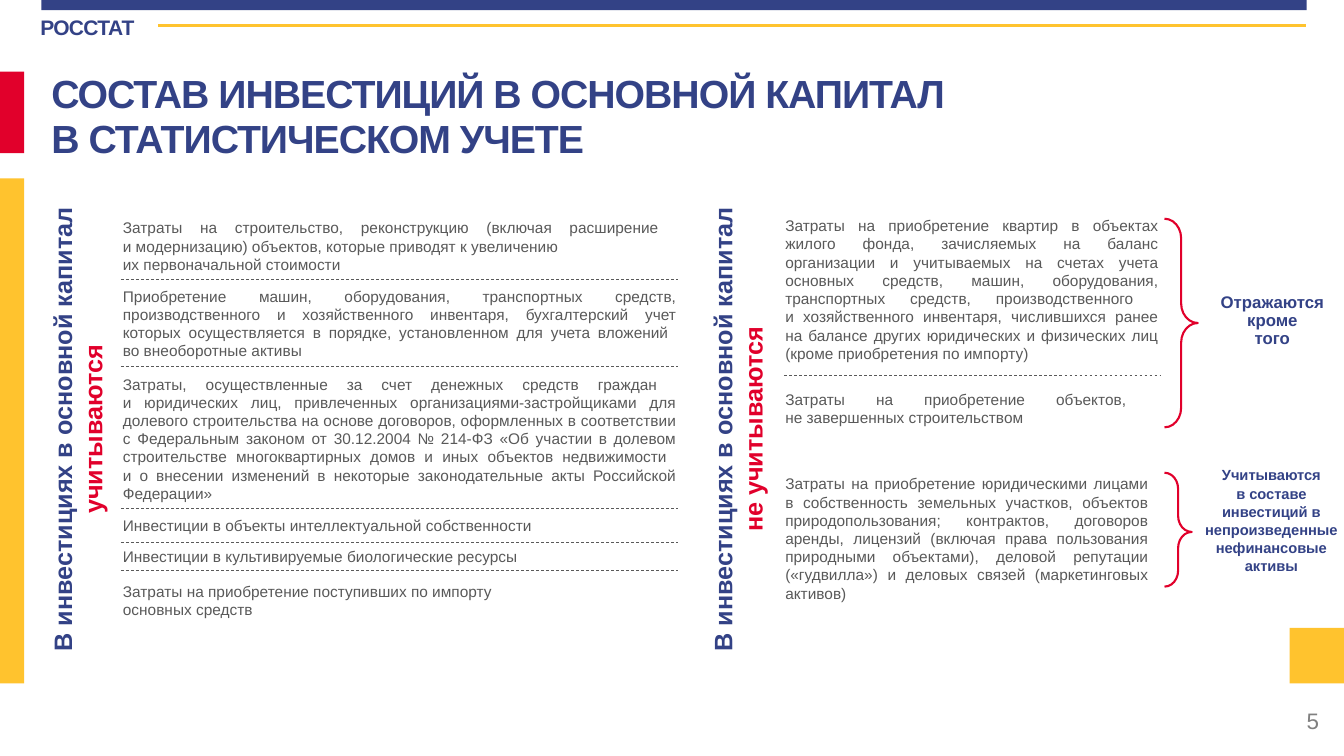
from dataclasses import dataclass

import pptx
import pptx.dml.color
import pptx.enum.dml
import pptx.enum.shapes
import pptx.enum.text
import pptx.oxml
import pptx.util

Inches = pptx.util.Inches
Pt = pptx.util.Pt
ALIGN = pptx.enum.text.PP_ALIGN
ANCHOR = pptx.enum.text.MSO_ANCHOR
SHAPE = pptx.enum.shapes.MSO_SHAPE


@dataclass(frozen=True)
class Theme:
    font: str = "Arial"
    blue: str = "334286"
    red: str = "E1002B"
    yellow: str = "FFC32E"
    text: str = "595959"
    number: str = "808080"
    title_size: float = 28
    heading_size: float = 18
    number_size: float = 16
    agency_size: float = 15
    note_size: float = 12
    small_note_size: float = 10.5
    body_size: float = 11
    body_leading: float = 13


T = Theme()

INCLUDED = [
    (0, 0.65, ["Затраты на строительство, реконструкцию (включая расширение \n"
               "и модернизацию) объектов, которые приводят к увеличению",
               "их первоначальной стоимости"]),
    (0.68, 0.83, ["Приобретение машин, оборудования, транспортных средств, производственного "
                  "и хозяйственного инвентаря, бухгалтерский учет которых осуществляется "
                  "в порядке, установленном для учета вложений \nво внеоборотные активы"]),
    (1.55, 1.38, ["Затраты, осуществленные за счет денежных средств граждан \n"
                  "и юридических лиц, привлеченных организациями-застройщиками для долевого "
                  "строительства на основе договоров, оформленных в соответствии с Федеральным "
                  "законом от 30.12.2004 № 214-ФЗ «Об участии в долевом строительстве "
                  "многоквартирных домов и иных объектов недвижимости \n"
                  "и о внесении изменений в некоторые законодательные акты "
                  "Российской Федерации»"]),
    (2.95, 0.28, ["Инвестиции в объекты интеллектуальной собственности"]),
    (3.26, 0.28, ["Инвестиции в культивируемые биологические ресурсы"]),
    (3.61, 0.47, ["Затраты на приобретение поступивших по импорту", "основных средств"]),
]
INCLUDED_RULES = [0.65, 1.51, 2.92, 3.26, 3.54]

EXCLUDED = [
    (0, 3.9, 1.56, ["Затраты на приобретение квартир в объектах жилого фонда, зачисляемых на "
                    "баланс организации и учитываемых на счетах учета основных средств, машин, "
                    "оборудования, транспортных средств, производственного \n"
                    "и хозяйственного инвентаря, числившихся ранее на балансе других "
                    "юридических и физических лиц (кроме приобретения по импорту)"]),
    (1.72, 3.89, 0.47, ["Затраты на приобретение объектов, \nне завершенных строительством"]),
    (2.56, 3.8, 1.38, ["Затраты на приобретение юридическими лицами в собственность земельных "
                       "участков, объектов природопользования; контрактов, договоров аренды, "
                       "лицензий (включая права пользования природными объектами), деловой "
                       "репутации («гудвилла») и деловых связей (маркетинговых активов)"]),
]


def rgb(color):
    return pptx.dml.color.RGBColor.from_string(color)


def add_text(p, text, size=T.body_size, color=T.text, bold=False, spacing=None):
    for i, part in enumerate(text.split("\n")):
        if i:
            p.add_line_break()
        if not part:
            continue
        r = p.add_run()
        r.text = part
        r.font.name = T.font
        r.font.size = Pt(size)
        r.font.bold = bold
        r.font.color.rgb = rgb(color)
        if spacing is not None:
            r.font._element.set("spc", str(round(spacing * 100)))


def text_box(slide, box, paragraphs, align=ALIGN.LEFT, leading=None,
             anchor=ANCHOR.TOP, inset=True, **style):
    sp = slide.shapes.add_textbox(*map(Inches, box))
    tf = sp.text_frame
    tf.word_wrap = True
    tf.vertical_anchor = anchor
    if not inset:
        tf.margin_left = tf.margin_top = tf.margin_right = tf.margin_bottom = 0
    for i, text in enumerate(paragraphs):
        p = tf.add_paragraph() if i else tf.paragraphs[0]
        p.alignment = align
        if leading:
            p.line_spacing = Pt(leading)
        add_text(p, text, **style)
    return sp


def cost_item(slide, box, paragraphs):
    text_box(slide, box, paragraphs, align=ALIGN.JUSTIFY, leading=T.body_leading)


def bar(slide, box, color):
    sp = slide.shapes.add_shape(SHAPE.RECTANGLE, *map(Inches, box))
    sp.shadow.inherit = False
    sp.fill.solid()
    sp.fill.fore_color.rgb = rgb(color)
    sp.line.fill.background()


def rule(slide, left, right, y, color=T.text, width=0.5, dashed=True):
    line = slide.shapes.add_connector(pptx.enum.shapes.MSO_CONNECTOR.STRAIGHT,
                                      Inches(left), Inches(y), Inches(right), Inches(y))
    line.line.color.rgb = rgb(color)
    line.line.width = Pt(width)
    if dashed:
        line.line.dash_style = pptx.enum.dml.MSO_LINE.DASH
    line._element.spPr.append(pptx.oxml.parse_xml(
        '<a:effectLst xmlns:a="http://schemas.openxmlformats.org/drawingml/2006/main"/>'))


def brace(slide, box, point):
    sp = slide.shapes.add_shape(SHAPE.RIGHT_BRACE, *map(Inches, box))
    sp.shadow.inherit = False
    sp.fill.background()
    sp.line.color.rgb = rgb(T.red)
    sp.line.width = Pt(1.5)
    sp.adjustments[0] = 0.59
    sp.adjustments[1] = point


def note(slide, box, text, size):
    text_box(slide, box, [text], align=ALIGN.CENTER, leading=T.body_leading,
             size=size, color=T.blue, bold=True)


def side_heading(slide, center_x, center_y, verdict):
    width, height = 5.75, 0.71
    sp = text_box(slide, (center_x - width / 2, center_y - height / 2, width, height),
                  ["В инвестициях в основной капитал\n"], align=ALIGN.CENTER,
                  size=T.heading_size, color=T.blue, bold=True)
    add_text(sp.text_frame.paragraphs[0], verdict, size=T.heading_size, color=T.red, bold=True)
    sp.rotation = 270


def frame(slide, width, height):
    bar(slide, (0.41, 0, 12.55, 0.1), T.blue)
    bar(slide, (0, 0.71, 0.24, 0.81), T.red)
    bar(slide, (0, 1.77, 0.24, 5.01), T.yellow)
    bar(slide, (width - 0.54, 6.23, 0.54, 0.55), T.yellow)
    rule(slide, 1.57, 12.95, 0.25, color=T.yellow, width=2, dashed=False)
    text_box(slide, (0.4, 0.14, 1.15, 0.31), ["РОССТАТ"], inset=False,
             size=T.agency_size, color=T.blue, bold=True, spacing=-0.5)
    text_box(slide, (width - 3.15, height - 0.55, 3, 0.4), ["5"], align=ALIGN.RIGHT,
             anchor=ANCHOR.MIDDLE, size=T.number_size, color=T.number)


def title(slide, box):
    sp = slide.shapes.title
    sp.left, sp.top, sp.width, sp.height = map(Inches, box)
    tf = sp.text_frame
    tf.auto_size = pptx.enum.text.MSO_AUTO_SIZE.NONE
    tf.vertical_anchor = ANCHOR.TOP
    p = tf.paragraphs[0]
    p.alignment = ALIGN.LEFT
    p.line_spacing = 0.95
    add_text(p, "СОСТАВ ИНВЕСТИЦИЙ В ОСНОВНОЙ КАПИТАЛ\nВ СТАТИСТИЧЕСКОМ УЧЕТЕ",
             size=T.title_size, color=T.blue, bold=True, spacing=-0.7)


def included_column(slide, left, top):
    side_heading(slide, left + 0.77, top + 2.14, "учитываются")
    for y, height, paragraphs in INCLUDED:
        cost_item(slide, (left + 1.12, top + y, 5.69, height), paragraphs)
    for y in INCLUDED_RULES:
        rule(slide, left + 1.2, left + 6.72, top + y)


def excluded_column(slide, left, top):
    side_heading(slide, left + 0.72, top + 2.16, "не учитываются")
    for y, width, height, paragraphs in EXCLUDED:
        cost_item(slide, (left + 1.09, top + y, width, height), paragraphs)
    rule(slide, left + 1.18, left + 4.92, top + 1.62)
    brace(slide, (left + 4.95, top + 0.07, 0.33, 2.07), 0.5)
    note(slide, (left + 5.4, top + 0.76, 1.24, 0.65), "Отражаются\nкроме\nтого", T.note_size)
    brace(slide, (left + 4.95, top + 2.59, 0.27, 1.13), 0.52)
    note(slide, (left + 5.22, top + 2.47, 1.58, 1.2),
         "Учитываются\nв составе инвестиций в непроизведенные нефинансовые активы",
         T.small_note_size)


def main():
    prs = pptx.Presentation()
    prs.slide_width, prs.slide_height = Inches(13.33), Inches(7.5)
    slide = prs.slides.add_slide(prs.slide_layouts[5])
    frame(slide, 13.33, 7.5)
    title(slide, (0.41, 0.67, 12, 0.95))
    included_column(slide, 0, 2.12)
    excluded_column(slide, 6.6, 2.1)
    prs.save("out.pptx")


if __name__ == "__main__":
    main()
